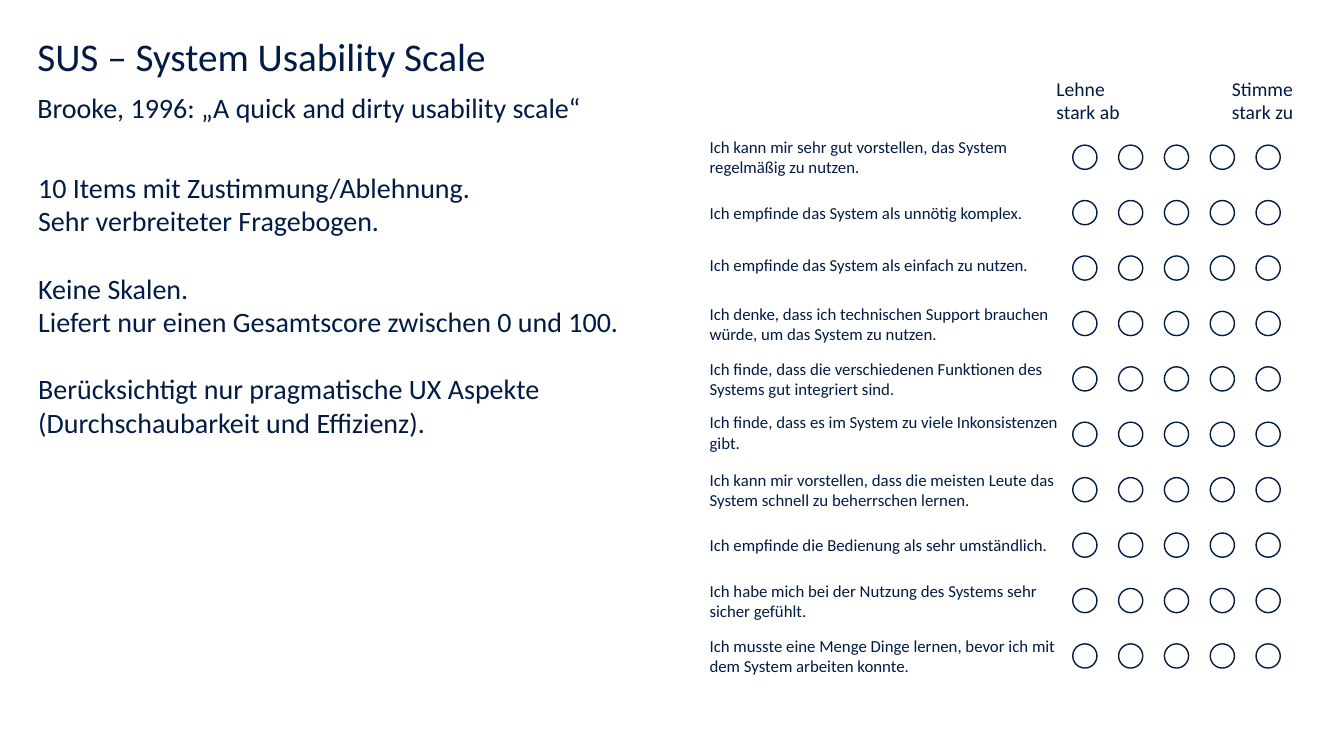
"""Build the System Usability Scale slide with its ten-item questionnaire."""
import dataclasses

import pptx
import pptx.dml.color
import pptx.enum.shapes
import pptx.enum.text
import pptx.util

SLIDE_WIDTH = pptx.util.Inches(13.333)
SLIDE_HEIGHT = pptx.util.Inches(7.5)
COLOURS = {"ink": "021B45", "paper": "FFFFFF"}
FONT = "Calibri"
ANCHOR = pptx.enum.text.MSO_ANCHOR
FIT = pptx.enum.text.MSO_AUTO_SIZE

FIRST_ROW, ROW_STEP = 20.8, 7.33
FIRST_CHOICE, CHOICE_STEP, CHOICES = 79.82, 3.41, 5
CHOICE_WIDTH, CHOICE_HEIGHT = 1.8, 3.2
ITEM_LEFT, ITEM_WIDTH = 52.06, 28.96
ITEM_HEIGHTS = {1: 4, 2: 6.67}


@dataclasses.dataclass(frozen=True)
class Area:
    """Position and size in percent of the slide."""
    left: float
    top: float
    width: float
    height: float

    def emu(self) -> tuple[int, int, int, int]:
        return (round(self.left * SLIDE_WIDTH / 100),
                round(self.top * SLIDE_HEIGHT / 100),
                round(self.width * SLIDE_WIDTH / 100),
                round(self.height * SLIDE_HEIGHT / 100))


@dataclasses.dataclass(frozen=True)
class Item:
    """Statement of the questionnaire, its line count and its rise in percent."""
    statement: str
    lines: int = 2
    rise: float = 0


ITEMS = [
    Item("Ich kann mir sehr gut vorstellen, das System regelmäßig zu nutzen."),
    Item("Ich empfinde das System als unnötig komplex.", lines=1),
    Item("Ich empfinde das System als einfach zu nutzen.", lines=1, rise=0.4),
    Item("Ich denke, dass ich technischen Support brauchen würde, um das System zu nutzen."),
    Item("Ich finde, dass die verschiedenen Funktionen des Systems gut integriert sind."),
    Item("Ich finde, dass es im System zu viele Inkonsistenzen gibt.", rise=0.25),
    Item("Ich kann mir vorstellen, dass die meisten Leute das System schnell zu beherrschen lernen."),
    Item("Ich empfinde die Bedienung als sehr umständlich.", lines=1),
    Item("Ich habe mich bei der Nutzung des Systems sehr sicher gefühlt."),
    Item("Ich musste eine Menge Dinge lernen, bevor ich mit dem System arbeiten konnte."),
]
SCALE_ENDS = {"Lehne stark ab": 77.87, "Stimme stark zu": 90.92}
FACTS = [
    ["10 Items mit Zustimmung/Ablehnung.", "Sehr verbreiteter Fragebogen."],
    ["Keine Skalen.", "Liefert nur einen Gesamtscore zwischen 0 und 100."],
    ["Berücksichtigt nur pragmatische UX Aspekte (Durchschaubarkeit und Effizienz)."],
]


def colour(name: str) -> pptx.dml.color.RGBColor:
    return pptx.dml.color.RGBColor.from_string(COLOURS[name])


def write(holder, area: Area, blocks: list[list[str]], *, size: float,
          anchor=ANCHOR.TOP, fit=FIT.SHAPE_TO_FIT_TEXT, inset: bool = True,
          line_spacing: float = 1, block_gap: float = 0, after: float = 0) -> None:
    """Place and fill a text holder; each block is a list of paragraphs."""
    holder.left, holder.top, holder.width, holder.height = area.emu()
    frame = holder.text_frame
    frame.word_wrap = True
    frame.auto_size = fit
    frame.vertical_anchor = anchor
    if not inset:
        frame.margin_left = frame.margin_right = 0
        frame.margin_top = frame.margin_bottom = 0
    lines = [(line, block_gap if number and not place else 0)
             for number, block in enumerate(blocks)
             for place, line in enumerate(block)]
    for number, (line, gap) in enumerate(lines):
        paragraph = frame.add_paragraph() if number else frame.paragraphs[0]
        paragraph.alignment = pptx.enum.text.PP_ALIGN.LEFT
        paragraph.line_spacing = line_spacing
        paragraph.space_before = pptx.util.Pt(gap)
        paragraph.space_after = pptx.util.Pt(after)
        run = paragraph.add_run()
        run.text = line
        run.font.name = FONT
        run.font.size = pptx.util.Pt(size)
        run.font.color.rgb = colour("ink")


def add_text(slide, area: Area, blocks: list[list[str]], **style) -> None:
    write(slide.shapes.add_textbox(*area.emu()), area, blocks, **style)


def add_choices(slide, middle: float) -> None:
    """Draw one row of answer circles around a vertical middle."""
    answers = slide.shapes.add_group_shape().shapes
    for column in range(CHOICES):
        area = Area(FIRST_CHOICE + column * CHOICE_STEP, middle - CHOICE_HEIGHT / 2,
                    CHOICE_WIDTH, CHOICE_HEIGHT)
        circle = answers.add_shape(pptx.enum.shapes.MSO_SHAPE.OVAL, *area.emu())
        circle.shadow.inherit = False
        circle.fill.solid()
        circle.fill.fore_color.rgb = colour("paper")
        circle.line.color.rgb = colour("ink")
        circle.line.width = pptx.util.Pt(1)


def add_statement(slide, item: Item, middle: float) -> None:
    height = ITEM_HEIGHTS[item.lines]
    area = Area(ITEM_LEFT, middle - item.rise - height / 2, ITEM_WIDTH, height)
    add_text(slide, area, [[item.statement]], size=12, after=6)


def main() -> None:
    deck = pptx.Presentation()
    deck.slide_width, deck.slide_height = SLIDE_WIDTH, SLIDE_HEIGHT
    slide = deck.slides.add_slide(deck.slide_layouts.get_by_name("Title Only"))

    write(slide.shapes.title, Area(2.78, 4.4, 94.52, 6.67),
          [["SUS – System Usability Scale"]], size=28, anchor=ANCHOR.MIDDLE,
          fit=FIT.NONE, inset=False, line_spacing=0.9)
    add_text(slide, Area(2.78, 12, 94.52, 4.4),
             [["Brooke, 1996: „A quick and dirty usability scale“"]],
             size=20, fit=FIT.NONE, inset=False)
    for label, left in SCALE_ENDS.items():
        add_text(slide, Area(left, 9.47, 6.3, 7.6), [[label]], size=14)

    middles = [FIRST_ROW + row * ROW_STEP for row in range(len(ITEMS))]
    for middle in middles:
        add_choices(slide, middle)
    for item, middle in zip(ITEMS, middles):
        add_statement(slide, item, middle)

    add_text(slide, Area(2.1, 21.87, 47.86, 41.73), FACTS, size=20, block_gap=24)
    deck.save("out.pptx")


if __name__ == "__main__":
    main()
